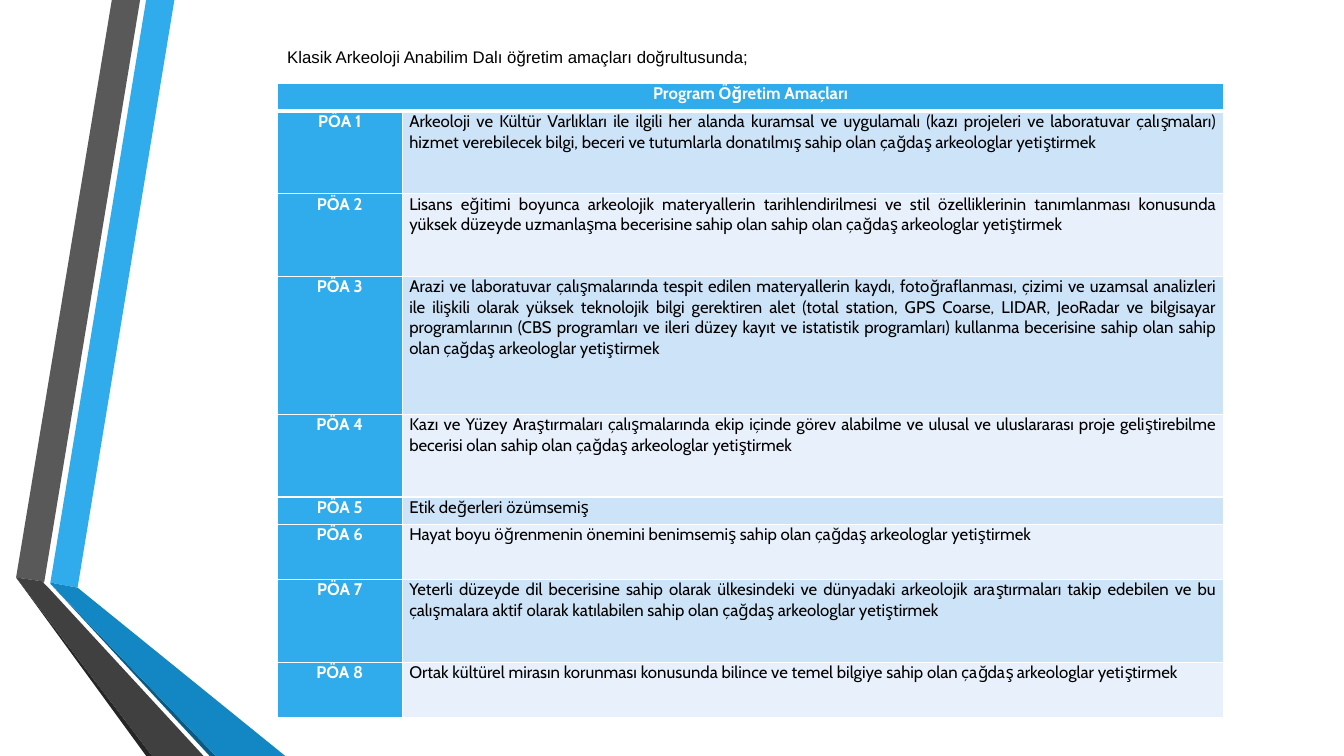
import lxml.etree
import pptx
import pptx.dml.color
import pptx.enum.text
import pptx.oxml.ns
import pptx.util

RGBColor = pptx.dml.color.RGBColor
Inches = pptx.util.Inches
Pt = pptx.util.Pt
qn = pptx.oxml.ns.qn
ALIGN = pptx.enum.text.PP_ALIGN

BLACK = RGBColor(0x00, 0x00, 0x00)
WHITE = RGBColor(0xFF, 0xFF, 0xFF)
SKY = RGBColor(0x30, 0xAC, 0xEC)
BLUE = RGBColor(0x12, 0x87, 0xC3)
NAVY = RGBColor(0x0C, 0x5A, 0x82)
GREY = RGBColor(0x59, 0x59, 0x59)
CHARCOAL = RGBColor(0x40, 0x40, 0x40)
SOOT = RGBColor(0x26, 0x26, 0x26)
BANDS = [RGBColor(0xCD, 0xE3, 0xF8), RGBColor(0xE8, 0xF1, 0xFB)]

# Ribbon outlines, in hundredths of an inch
RIBBONS = [
    (SKY, [(50, 578), (77, 583), (173, 0), (145, 0)]),
    (GREY, [(139, 0), (111, 0), (16, 573), (44, 577)]),
    (SOOT, [(16, 573), (145, 750), (151, 750)]),
    (NAVY, [(50, 579), (208, 750), (214, 750)]),
    (BLUE, [(50, 579), (214, 750), (283, 750), (77, 583), (50, 578)]),
    (CHARCOAL, [(202, 750), (48, 583), (43, 578), (44, 577), (16, 573), (151, 750)]),
]

# Each aim with its row height, counted in units of the header's height
AIMS = [
    (3, "Arkeoloji ve Kültür Varlıkları ile ilgili her alanda kuramsal ve uygulamalı "
        "(kazı projeleri ve laboratuvar çalışmaları) hizmet verebilecek bilgi, beceri ve "
        "tutumlarla donatılmış sahip olan çağdaş arkeologlar yetiştirmek"),
    (3, "Lisans eğitimi boyunca arkeolojik materyallerin tarihlendirilmesi ve stil "
        "özelliklerinin tanımlanması konusunda yüksek düzeyde uzmanlaşma becerisine sahip "
        "olan sahip olan çağdaş arkeologlar yetiştirmek"),
    (5, "Arazi ve laboratuvar çalışmalarında tespit edilen materyallerin kaydı, "
        "fotoğraflanması, çizimi ve uzamsal analizleri ile ilişkili olarak yüksek "
        "teknolojik bilgi gerektiren alet (total station, GPS Coarse, LIDAR, JeoRadar ve "
        "bilgisayar programlarının (CBS programları ve ileri düzey kayıt ve istatistik "
        "programları) kullanma becerisine sahip olan sahip olan çağdaş arkeologlar "
        "yetiştirmek"),
    (3, "Kazı ve Yüzey Araştırmaları çalışmalarında ekip içinde görev alabilme ve ulusal "
        "ve uluslararası proje geliştirebilme becerisi olan sahip olan çağdaş arkeologlar "
        "yetiştirmek"),
    (1, "Etik değerleri özümsemiş"),
    (2, "Hayat boyu öğrenmenin önemini benimsemiş sahip olan çağdaş arkeologlar yetiştirmek"),
    (3, "Yeterli düzeyde dil becerisine sahip olarak ülkesindeki ve dünyadaki arkeolojik "
        "araştırmaları takip edebilen ve bu çalışmalara aktif olarak katılabilen sahip olan "
        "çağdaş arkeologlar yetiştirmek"),
    (2, "Ortak kültürel mirasın korunması konusunda bilince ve temel bilgiye sahip olan "
        "çağdaş arkeologlar yetiştirmek"),
]
TABLE_LEFT, TABLE_TOP, TABLE_HEIGHT = 2.75, 0.83, 6.29
CODE_WIDTH, AIM_WIDTH = 1.24, 8.15


def add_border(cell, side, width):
    """Draw a white line on one side (L, R, T or B) of a table cell."""
    properties = cell._tc.get_or_add_tcPr()
    line = lxml.etree.SubElement(properties, qn(f"a:ln{side}"), w=str(Pt(width)))
    fill = lxml.etree.SubElement(line, qn("a:solidFill"))
    lxml.etree.SubElement(fill, qn("a:srgbClr"), val=str(WHITE))


def fill_cell(cell, text, fill, color, bold, alignment, top=1, bottom=1):
    for side, width in (("L", 1), ("R", 1), ("T", top), ("B", bottom)):
        add_border(cell, side, width)
    cell.fill.solid()
    cell.fill.fore_color.rgb = fill
    cell.margin_left = cell.margin_right = Inches(0.07)
    cell.margin_top = cell.margin_bottom = 0
    cell.text = text
    paragraph = cell.text_frame.paragraphs[0]
    paragraph.alignment = alignment
    paragraph.space_after = Pt(6)
    paragraph.font.name = "Cabin"
    paragraph.font.size = Pt(12)
    paragraph.font.bold = bold
    paragraph.font.color.rgb = color


deck = pptx.Presentation()
deck.slide_width, deck.slide_height = Inches(13.33), Inches(7.5)
slide = deck.slides.add_slide(deck.slide_layouts[6])

for color, (start, *corners) in RIBBONS:
    builder = slide.shapes.build_freeform(*start, scale=Inches(0.01))
    builder.add_line_segments(corners, close=True)
    ribbon = builder.convert_to_shape()
    ribbon.fill.solid()
    ribbon.fill.fore_color.rgb = color
    ribbon.line.fill.background()
    ribbon.shadow.inherit = False

intro = slide.shapes.add_textbox(Inches(TABLE_LEFT), Inches(0.41), Inches(7.38), Inches(0.61))
intro.text_frame.word_wrap = True
intro.text_frame.text = "Klasik Arkeoloji Anabilim Dalı öğretim amaçları doğrultusunda;"
intro_font = intro.text_frame.paragraphs[0].font
intro_font.name = "Arial"
intro_font.size = Pt(12)
intro_font.color.rgb = BLACK

aims_table = slide.shapes.add_table(
    len(AIMS) + 1, 2, Inches(TABLE_LEFT), Inches(TABLE_TOP),
    Inches(CODE_WIDTH + AIM_WIDTH), Inches(TABLE_HEIGHT)).table
aims_table.first_row = aims_table.horz_banding = False
aims_table.columns[0].width = Inches(CODE_WIDTH)
aims_table.columns[1].width = Inches(AIM_WIDTH)

row_units = [1] + [units for units, _ in AIMS]
for row, units in zip(aims_table.rows, row_units):
    row.height = Inches(TABLE_HEIGHT * units / sum(row_units))

header = aims_table.cell(0, 0)
header.merge(aims_table.cell(0, 1))
fill_cell(header, "Program Öğretim Amaçları", SKY, WHITE, True, ALIGN.CENTER, bottom=3)
for number, (_, aim) in enumerate(AIMS, start=1):
    top = 3 if number == 1 else 1
    fill_cell(aims_table.cell(number, 0), f"PÖA {number}", SKY, WHITE, True, ALIGN.CENTER, top)
    fill_cell(aims_table.cell(number, 1), aim, BANDS[(number - 1) % 2], BLACK, False,
              ALIGN.JUSTIFY, top)

deck.save("out.pptx")
